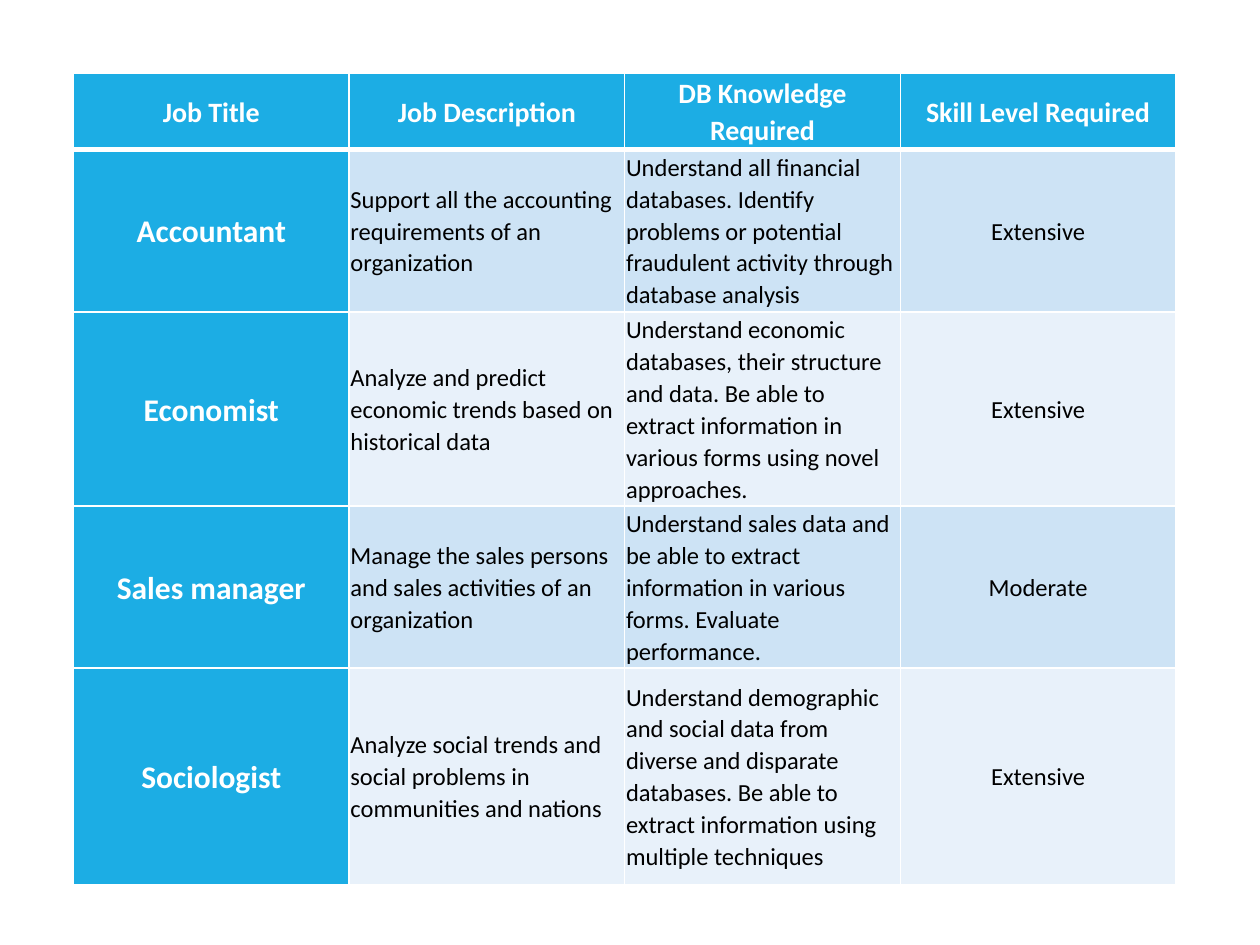
"""Build a slide with a table of jobs and the database knowledge they need."""
from dataclasses import dataclass

from lxml.etree import SubElement
from pptx import Presentation
from pptx.dml.color import RGBColor
from pptx.enum.text import MSO_ANCHOR as Anchor, PP_ALIGN as Align
from pptx.oxml.ns import qn
from pptx.util import Pt


@dataclass(frozen=True)
class Theme:
    font: str = "Calibri"
    accent: str = "1CADE4"
    bands: tuple = ("CDE3F5", "E8F1FA")
    light: str = "FFFFFF"
    dark: str = "000000"
    header_size: int = 16
    title_size: int = 18
    body_size: int = 14


theme = Theme()
column_width = 157.5
row_heights = [39.6, 92.9, 108, 85, 123.8]
rows = [
    ("Job Title", "Job Description", "DB Knowledge Required", "Skill Level Required"),
    ("Accountant", "Support all the accounting requirements of an organization",
     "Understand all financial databases. Identify problems or potential fraudulent "
     "activity through database analysis", "Extensive"),
    ("Economist", "Analyze and predict economic trends based on historical data",
     "Understand economic databases, their structure and data. Be able to extract "
     "information in various forms using novel approaches.", "Extensive"),
    ("Sales manager", "Manage the sales persons and sales activities of an organization",
     "Understand sales data and be able to extract information in various forms. "
     "Evaluate performance.", "Moderate"),
    ("Sociologist", "Analyze social trends and social problems in communities and nations",
     "Understand demographic and social data from diverse and disparate databases. "
     "Be able to extract information using multiple techniques", "Extensive"),
]


def add_border(cell, side, width):
    line = SubElement(cell._tc.get_or_add_tcPr(), qn(f"a:ln{side}"), w=str(Pt(width)))
    fill = SubElement(line, qn("a:solidFill"))
    SubElement(fill, qn("a:srgbClr"), val=theme.light)


deck = Presentation()
deck.slide_width, deck.slide_height = Pt(720), Pt(540)
page = deck.slides.add_slide(deck.slide_layouts[6])
frame = page.shapes.add_table(len(rows), len(rows[0]), Pt(42), Pt(42),
                              Pt(column_width * len(rows[0])), Pt(sum(row_heights)))
table = frame.table
for column in table.columns:
    column.width = Pt(column_width)

for row_index, texts in enumerate(rows):
    table.rows[row_index].height = Pt(row_heights[row_index])
    is_header = row_index == 0
    for column_index, text in enumerate(texts):
        cell = table.cell(row_index, column_index)
        is_accent = is_header or column_index == 0
        for side in "LRTB":
            is_header_rule = (row_index, side) in ((0, "B"), (1, "T"))
            add_border(cell, side, 3 if is_header_rule else 1)
        cell.fill.solid()
        cell.fill.fore_color.rgb = RGBColor.from_string(
            theme.accent if is_accent else theme.bands[(row_index - 1) % 2])
        cell.vertical_anchor = Anchor.MIDDLE
        cell.margin_left = cell.margin_right = Pt(0.75)
        cell.margin_top = cell.margin_bottom = Pt(0.75)

        cell.text_frame.text = text
        para = cell.text_frame.paragraphs[0]
        para.alignment = Align.CENTER if is_accent or column_index == 3 else Align.LEFT
        para.line_spacing = 1.07
        para.space_after = Pt(0 if is_header else 8)
        font = para.runs[0].font
        font.name = theme.font
        font.bold = is_accent
        font.color.rgb = RGBColor.from_string(theme.light if is_accent else theme.dark)
        if is_header:
            font.size = Pt(theme.header_size)
        else:
            font.size = Pt(theme.title_size if is_accent else theme.body_size)

deck.save("out.pptx")
